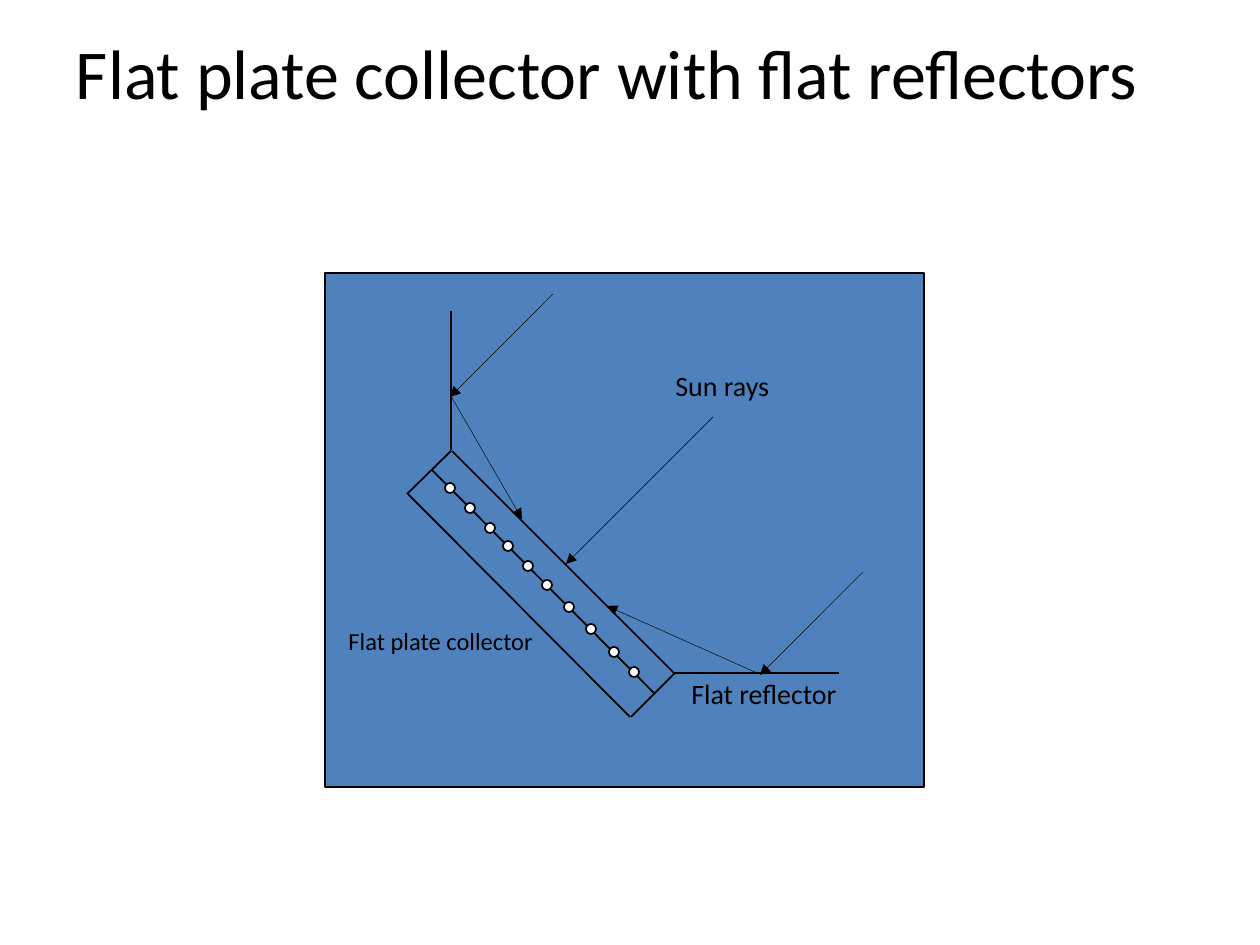
from lxml import etree
from pptx import Presentation
from pptx.dml.color import RGBColor
from pptx.enum.shapes import MSO_CONNECTOR, MSO_SHAPE
from pptx.enum.text import MSO_ANCHOR, PP_ALIGN
from pptx.oxml.ns import qn
from pptx.util import Pt

EMU_PER_PX = 914400 / 126
STRAIGHT = MSO_CONNECTOR.STRAIGHT
RECTANGLE, OVAL = MSO_SHAPE.RECTANGLE, MSO_SHAPE.OVAL
TOP, LEFT = MSO_ANCHOR.TOP, PP_ALIGN.LEFT
BLACK, WHITE, BLUE = "000000", "FFFFFF", "4F81BD"
EDGE, RAY = 1, 0.25

TITLE_BOX = (76, 29, 1110, 171)
DIAGRAM_BOX = (325, 273, 599, 514)

COLLECTOR_EDGES = [
    (82, 221, 126, 178),
    (83, 221, 305, 444),
    (306, 444, 350, 400),
    (127, 178, 349, 400),
]
ABSORBER_PLATE = (107, 197, 329, 420)
REFLECTORS = [(126, 177, 126, 38), (350, 400, 514, 400)]
SUN_RAYS = [
    (228, 21, 125, 124),
    (388, 144, 241, 291),
    (538, 299, 435, 402),
    (126, 123, 197, 246),
    (432, 400, 282, 333),
]
TUBE_LEFTS = [120, 140, 160, 178, 198, 217, 239, 261, 284, 304]
TUBE_DROP, TUBE_SIZE = 90, 10
LABEL_SIZE = (223, 102)
LABELS = [
    ("Sun rays", 338, 89, 16),
    ("Flat reflector", 354, 397, 16),
    ("Flat plate collector", 11, 347, 14),
]


def px(*lengths):
    """Turn px lengths into EMU."""
    return [round(length * EMU_PER_PX) for length in lengths]


def color(hex_value):
    """Turn a hex string into a colour."""
    return RGBColor.from_string(hex_value)


def apply(target, values):
    """Set each attribute named in values."""
    for name, value in values.items():
        setattr(target, name, value)


def add_solid(slide, kind, box, fill):
    """Add a filled shape with a thin black outline."""
    solid = slide.shapes.add_shape(kind, *px(*box))
    solid.shadow.inherit = False
    solid.fill.solid()
    solid.fill.fore_color.rgb = color(fill)
    solid.line.color.rgb = color(BLACK)
    solid.line.width = Pt(EDGE)


def add_line(slide, origin, ends, width, arrow=False):
    """Add a black line, with an arrowhead at its end if asked."""
    left, top = origin
    x1, y1, x2, y2 = ends
    line = slide.shapes.add_connector(
        STRAIGHT, *px(left + x1, top + y1, left + x2, top + y2))
    line.line.color.rgb = color(BLACK)
    line.line.width = Pt(width)
    properties = line._element.spPr
    if arrow:
        outline = properties.find(qn("a:ln"))
        etree.SubElement(outline, qn("a:tailEnd"), type="triangle")
    etree.SubElement(properties, qn("a:effectLst"))


def add_text(slide, box, wording, size, **frame_format):
    """Add one left-aligned line of black text."""
    frame = slide.shapes.add_textbox(*px(*box)).text_frame
    apply(frame, {"word_wrap": True, "vertical_anchor": TOP, **frame_format})
    paragraph = frame.paragraphs[0]
    paragraph.alignment = LEFT
    run = paragraph.add_run()
    run.text = wording
    apply(run.font, {"name": "Calibri", "size": Pt(size)})
    run.font.color.rgb = color(BLACK)


def add_title(slide, box):
    """Add the slide title without margins."""
    add_text(slide, box, "Flat plate collector with flat reflectors", 40,
             margin_left=0, margin_top=0, margin_right=0, margin_bottom=0)


def add_collector(slide, origin):
    """Add the tilted collector with its plate and row of tubes."""
    left, top = origin
    for edge in [*COLLECTOR_EDGES, ABSORBER_PLATE]:
        add_line(slide, origin, edge, EDGE)
    for tube in TUBE_LEFTS:
        box = (left + tube, top + tube + TUBE_DROP, TUBE_SIZE, TUBE_SIZE)
        add_solid(slide, OVAL, box, WHITE)


def add_diagram(slide, box):
    """Add the panel with collector, reflectors, sun rays and labels."""
    left, top = origin = box[:2]
    add_solid(slide, RECTANGLE, box, BLUE)
    add_collector(slide, origin)
    for reflector in REFLECTORS:
        add_line(slide, origin, reflector, EDGE)
    for ray in SUN_RAYS:
        add_line(slide, origin, ray, RAY, arrow=True)
    for wording, x, y, size in LABELS:
        add_text(slide, (left + x, top + y, *LABEL_SIZE), wording, size)


def main():
    """Build and save the slide."""
    deck = Presentation()
    deck.slide_width, deck.slide_height = px(1260, 945)
    slide = deck.slides.add_slide(deck.slide_layouts[6])
    add_title(slide, TITLE_BOX)
    add_diagram(slide, DIAGRAM_BOX)
    deck.save("out.pptx")


if __name__ == "__main__":
    main()
